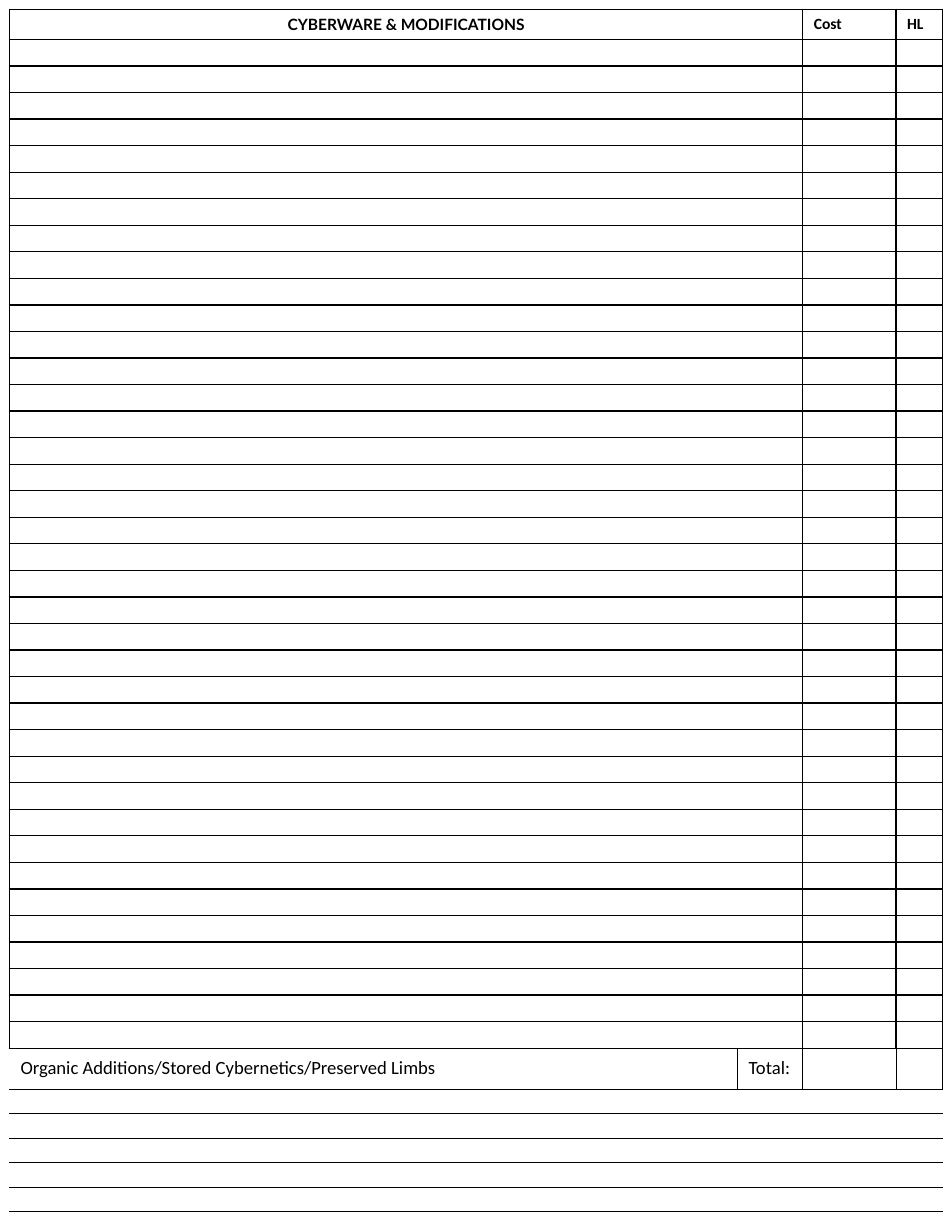
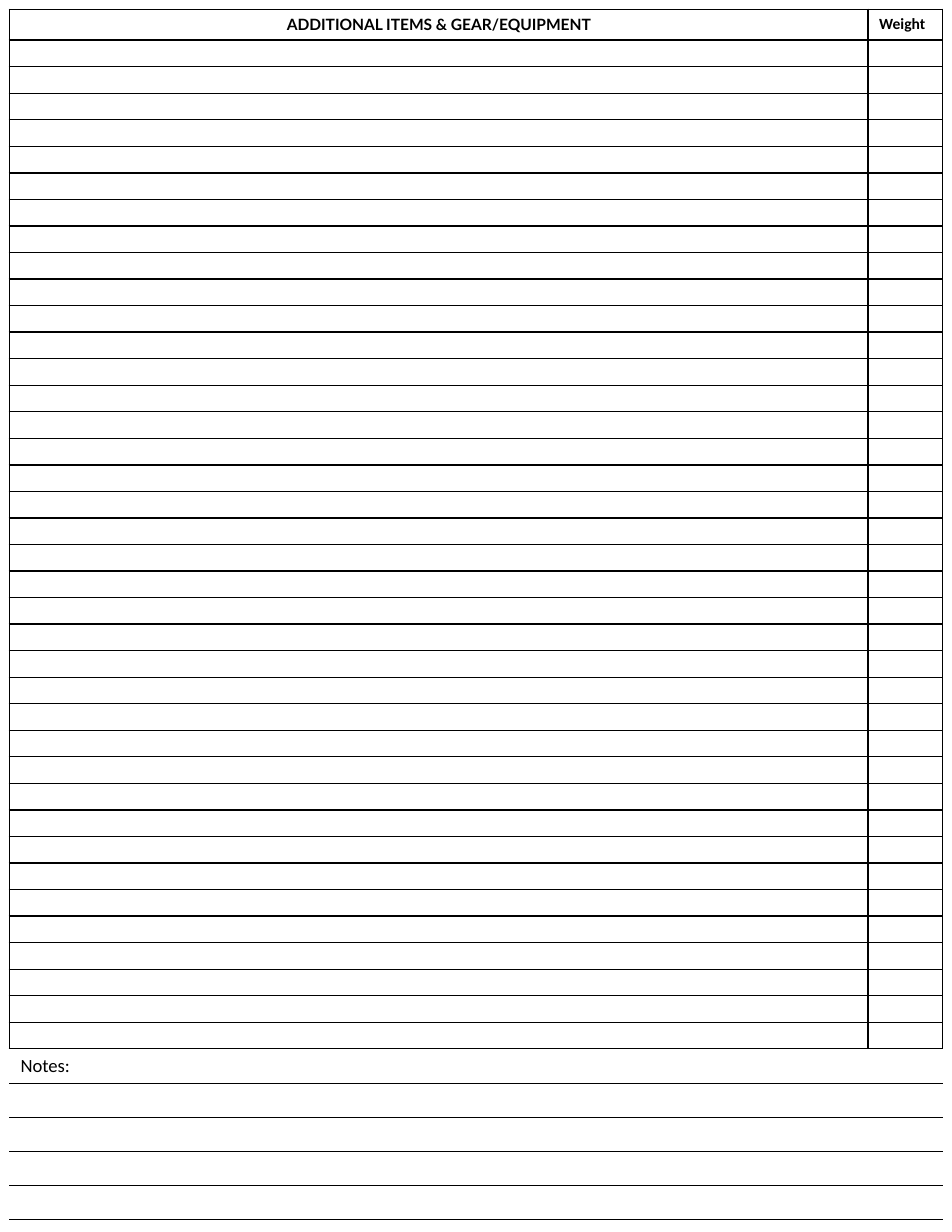
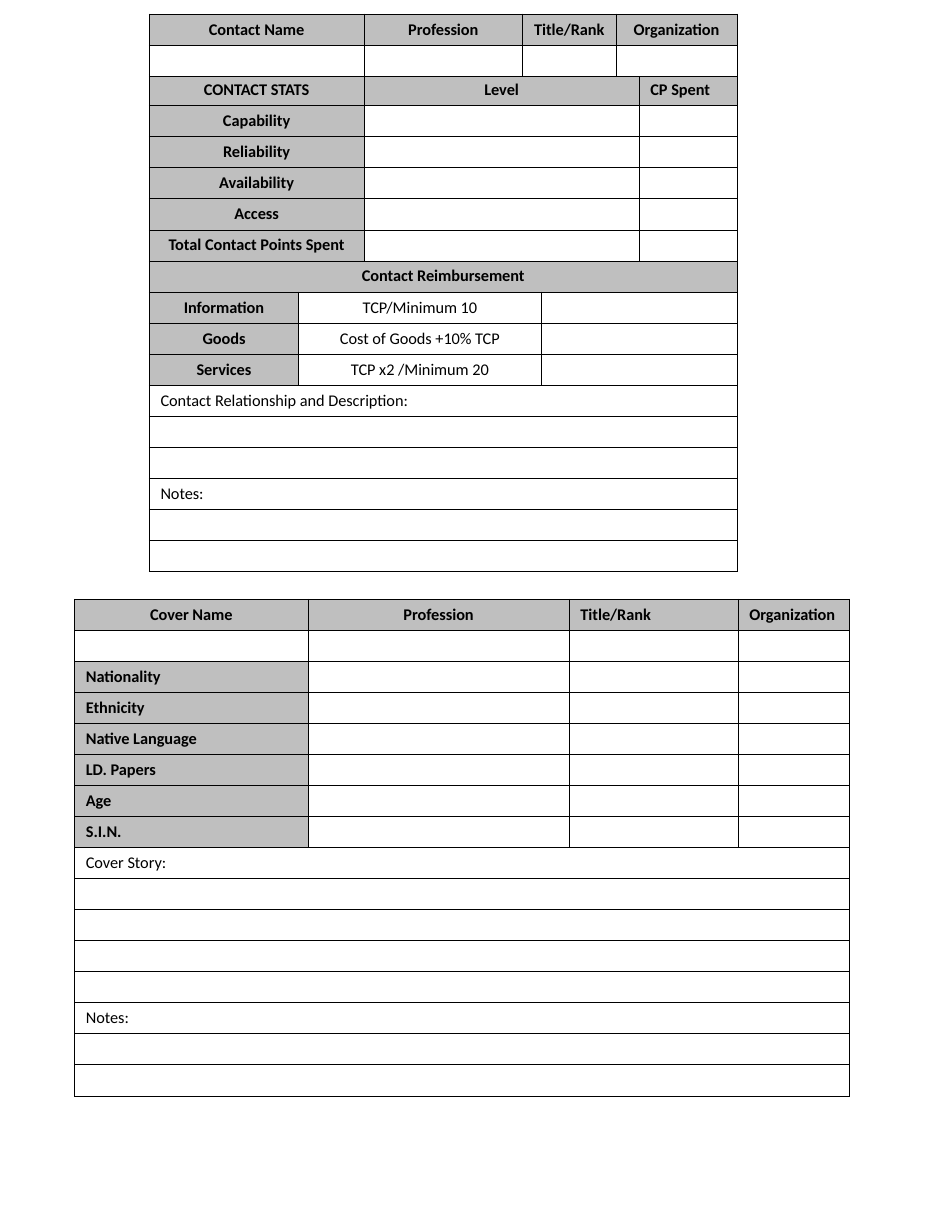
from dataclasses import dataclass

from lxml import etree
from pptx import Presentation
from pptx.dml.color import RGBColor
from pptx.enum.text import MSO_ANCHOR, PP_ALIGN
from pptx.oxml.ns import qn
from pptx.util import Inches, Pt

LEFT, CENTER = PP_ALIGN.LEFT, PP_ALIGN.CENTER
TOP, MIDDLE = MSO_ANCHOR.TOP, MSO_ANCHOR.MIDDLE

PAGE_WIDTH, PAGE_HEIGHT = Inches(8.5), Inches(11)
GRID_COLUMNS = 102
UNIT = PAGE_WIDTH / GRID_COLUMNS  # one grid step, used across and down

COLORS = {"ink": "000000", "paper": "FFFFFF", "label": "BFBFBF"}
BODY_FONT, HEADING_FONT = "Calibri", "Lato"
THICK, THIN = 1, 0.5
BOX, RULE = "LTRB", "TB"
SHEET_LINES = 38
LINE_HEIGHT = 2.84
FORM_HEIGHT = 3.3


@dataclass(frozen=True)
class Entry:
    text: str = ""
    span: int = 1
    bold: bool = False
    align: PP_ALIGN = LEFT
    fill: str = "paper"
    size: float = 10.5
    font: str = BODY_FONT
    anchor: MSO_ANCHOR = TOP
    sides: str = BOX


@dataclass(frozen=True)
class Row:
    entries: list[Entry]
    height: float = FORM_HEIGHT
    border: float = THIN
    bottom: float = THIN


@dataclass(frozen=True)
class Form:
    """A table placed on the grid; all lengths are in grid steps."""
    left: float
    top: float
    columns: list[float]
    rows: list[Row]


def label(text: str, span: int = 1, align: PP_ALIGN = CENTER) -> Entry:
    return Entry(text, span, True, align, "label")


def heading_row(texts: list[str]) -> Row:
    return Row([label(text) for text in texts])


def full_rows(texts: list[str], span: int) -> list[Row]:
    return [Row([Entry(text, span)]) for text in texts]


def sheet_rows(title: str, narrow: list[str], span: int, height: float) -> list[Row]:
    """Heading and the ruled lines of a list sheet."""
    heading = [Entry(title, span, True, CENTER, size=10, font=HEADING_FONT)]
    heading += [Entry(text, bold=True, size=10) for text in narrow]
    blank = [Entry(span=span, size=8)] + [Entry(size=8) for _ in narrow]
    lines = [Row(blank, LINE_HEIGHT, THICK, THICK)] * (SHEET_LINES - 1)
    return [Row(heading, height, THICK, THICK), *lines, Row(blank, LINE_HEIGHT, THICK, THIN)]


def ruled_rows(count: int, span: int, height: float, size: float) -> list[Row]:
    return [Row([Entry(span=span, size=size, sides=RULE)], height)] * count


def draw_borders(cell, entry: Entry, row: Row) -> None:
    properties = cell._tc.get_or_add_tcPr()
    for side in BOX:
        width = row.bottom if side == "B" else row.border
        line = etree.SubElement(properties, qn(f"a:ln{side}"), w=str(Pt(width)))
        if side in entry.sides:
            fill = etree.SubElement(line, qn("a:solidFill"))
            etree.SubElement(fill, qn("a:srgbClr"), val=COLORS["ink"])
        else:
            etree.SubElement(line, qn("a:noFill"))


def write_entry(cell, entry: Entry) -> None:
    cell.vertical_anchor = entry.anchor
    paragraph = cell.text_frame.paragraphs[0]
    paragraph.alignment = entry.align
    if not entry.text:
        # An empty cell keeps its row low only through its end-mark size.
        etree.SubElement(paragraph._p, qn("a:endParaRPr"), sz=str(int(entry.size * 100)))
        return
    run = paragraph.add_run()
    run.text = entry.text
    run.font.name = entry.font
    run.font.size = Pt(entry.size)
    run.font.bold = entry.bold
    run.font.color.rgb = RGBColor.from_string(COLORS["ink"])


def draw_form(slide, form: Form) -> None:
    width = sum(form.columns)
    height = sum(row.height for row in form.rows)
    box = [round(UNIT * value) for value in (form.left, form.top, width, height)]
    table = slide.shapes.add_table(len(form.rows), len(form.columns), *box).table
    table.first_row = table.horz_banding = False
    for column, share in zip(table.columns, form.columns):
        column.width = round(UNIT * share)
    for index, row in enumerate(form.rows):
        table.rows[index].height = round(UNIT * row.height)
        start = 0
        for entry in row.entries:
            end = start + entry.span
            for position in range(start, end):
                cell = table.cell(index, position)
                draw_borders(cell, entry, row)
                cell.fill.solid()
                cell.fill.fore_color.rgb = RGBColor.from_string(COLORS[entry.fill])
                write_entry(cell, entry if position == start else Entry(size=entry.size))
            if entry.span > 1:
                table.cell(index, start).merge(table.cell(index, end - 1))
            start = end


def cyberware_sheet() -> Form:
    total = Row([
        Entry("Organic Additions/Stored Cybernetics/Preserved Limbs",
              size=12, anchor=MIDDLE, sides="TRB"),
        Entry("Total:", size=12, anchor=MIDDLE), Entry(), Entry(),
    ], 4.37)
    rows = sheet_rows("CYBERWARE & MODIFICATIONS", ["Cost", "HL"], 2, 3.15)
    return Form(1, 1, [78, 7, 10, 5], rows + [total] + ruled_rows(6, 4, 2.63, 7))


def gear_sheet() -> Form:
    notes = Row([Entry("Notes:", 2, size=12, sides=RULE)], 3.65)
    rows = sheet_rows("ADDITIONAL ITEMS & GEAR/EQUIPMENT", ["Weight"], 1, 3.3)
    return Form(1, 1, [92, 8], rows + [notes] + ruled_rows(5, 2, 3.65, 12))


def contact_stats() -> Form:
    stats = ["Capability", "Reliability", "Availability", "Access",
             "Total Contact Points Spent"]
    prices = {
        "Information": "TCP/Minimum 10",
        "Goods": "Cost of Goods +10% TCP",
        "Services": "TCP x2 /Minimum 20",
    }
    rows = [
        Row([label("CONTACT STATS", 2), label("Level", 2), label("CP Spent", align=LEFT)]),
        *[Row([label(stat, 2), Entry(span=2), Entry()]) for stat in stats],
        Row([label("Contact Reimbursement", 5)]),
        *[Row([label(service), Entry(price, 2, align=CENTER), Entry(span=2)])
          for service, price in prices.items()],
        *full_rows(["Contact Relationship and Description:", "", "", "Notes:", "", ""], 5),
    ]
    return Form(16, 8, [16, 7, 19, 10.5, 10.5], rows)


def contact_identity() -> Form:
    rows = [heading_row(["Contact Name", "Profession", "Title/Rank", "Organization"]),
            Row([Entry()] * 4)]
    return Form(16, 1.5, [23, 17, 10, 13], rows)


def cover_identity() -> Form:
    details = ["Nationality", "Ethnicity", "Native Language", "LD. Papers", "Age", "S.I.N."]
    rows = [
        Row([label("Cover Name"), label("Profession"),
             label("Title/Rank", align=LEFT), label("Organization", align=LEFT)]),
        Row([Entry()] * 4),
        *[Row([label(detail, align=LEFT)] + [Entry()] * 3) for detail in details],
        *full_rows(["Cover Story:", "", "", "", "", "Notes:", "", ""], 4),
    ]
    return Form(8, 64.2, [25, 28, 18.1, 11.9], rows)


def main() -> None:
    presentation = Presentation()
    presentation.slide_width, presentation.slide_height = PAGE_WIDTH, PAGE_HEIGHT
    blank_layout = presentation.slide_layouts[6]
    pages = [
        [cyberware_sheet()],
        [gear_sheet()],
        [contact_stats(), contact_identity(), cover_identity()],
    ]
    for forms in pages:
        slide = presentation.slides.add_slide(blank_layout)
        for form in forms:
            draw_form(slide, form)
    presentation.save("out.pptx")


if __name__ == "__main__":
    main()
